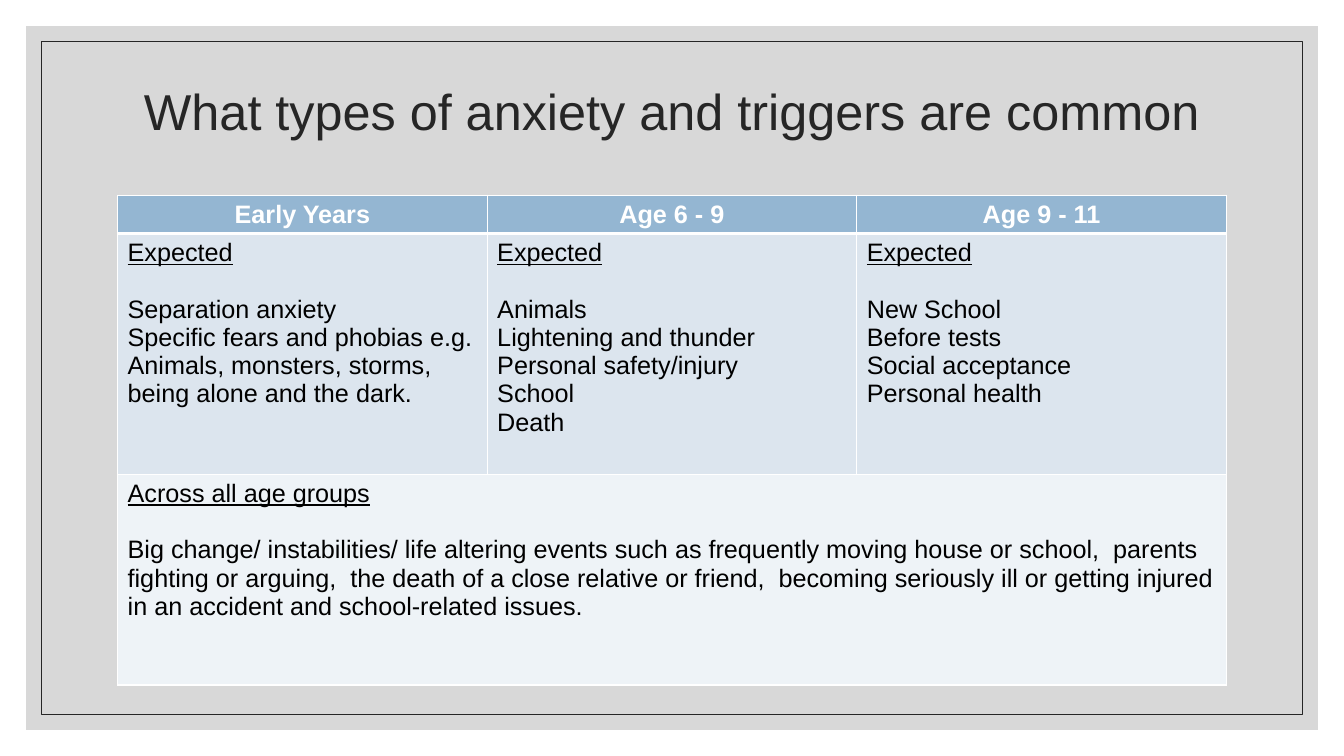
from lxml import etree
from pptx import Presentation
from pptx.dml import color
from pptx.enum import shapes, text
from pptx.oxml import ns
from pptx.util import Pt

BLACK = color.RGBColor(0x00, 0x00, 0x00)
WHITE = color.RGBColor(0xFF, 0xFF, 0xFF)
INK = color.RGBColor(0x26, 0x26, 0x26)
GREY = color.RGBColor(0xBF, 0xBF, 0xBF)
HEADER_BLUE = color.RGBColor(0x94, 0xB6, 0xD2)
BAND_BLUE = color.RGBColor(0xDC, 0xE5, 0xEE)
PALE_BLUE = color.RGBColor(0xEE, 0xF3, 0xF7)

COLUMNS = [
    ("Early Years", ["Separation anxiety",
                     "Specific fears and phobias e.g. Animals, monsters, storms, "
                     "being alone and the dark."]),
    ("Age 6 - 9", ["Animals", "Lightening and thunder", "Personal safety/injury",
                   "School", "Death"]),
    ("Age 9 - 11", ["New School", "Before tests", "Social acceptance",
                    "Personal health"]),
]
ALL_AGES = ("Big change/ instabilities/ life altering events such as frequently "
            "moving house or school,  parents fighting or arguing,  the death of a "
            "close relative or friend,  becoming seriously ill or getting injured "
            "in an accident and school-related issues.")
ROW_HEIGHTS = [27.4, 172, 150.5]
ROW_FILLS = [HEADER_BLUE, BAND_BLUE, PALE_BLUE]
BORDER_WIDTHS = [{"L": 1, "R": 1, "T": 1, "B": 3},
                 {"L": 1, "R": 1, "T": 3, "B": 1},
                 {"L": 1, "R": 1, "T": 1, "B": 1}]


def write(frame, lines, ink, **formats):
    frame.text = "\n".join(lines)
    for para in frame.paragraphs:
        for span in para.runs:
            span.font.color.rgb = ink
            for name, value in {"name": "Arial", "bold": False, **formats}.items():
                setattr(span.font, name, value)


def write_section(cell, heading, lines):
    write(cell.text_frame, [heading, *lines], BLACK, size=Pt(18))
    para = cell.text_frame.paragraphs[0]
    para.space_after = Pt(20.3)
    para.runs[0].font.underline = True


deck = Presentation()
deck.slide_width, deck.slide_height = Pt(960), Pt(540)
page = deck.slides.add_slide(deck.slide_layouts[5])

panel, outline = [
    page.shapes.add_shape(shapes.MSO_SHAPE.RECTANGLE, Pt(inset), Pt(inset),
                          Pt(960 - 2 * inset), Pt(540 - 2 * inset))
    for inset in (18.7, 29.4)
]
panel.shadow.inherit = outline.shadow.inherit = False
panel.fill.solid()
panel.fill.fore_color.rgb = GREY
panel.line.fill.background()
shade = panel.element.spPr.find(ns.qn("a:solidFill"))[0]
etree.SubElement(shade, ns.qn("a:alpha"), val="60000")
outline.fill.background()
outline.line.color.rgb = INK
outline.line.width = Pt(0.5)

title = page.shapes.title
outline.element.addnext(title.element)
title.left, title.top, title.width, title.height = Pt(84), Pt(50.4), Pt(792), Pt(62)
write(title.text_frame, ["What types of anxiety and triggers are common"], INK, size=Pt(36))
title.text_frame.auto_size = text.MSO_AUTO_SIZE.NONE
title.text_frame.vertical_anchor = text.MSO_ANCHOR.MIDDLE
title.text_frame.paragraphs[0].alignment = text.PP_ALIGN.CENTER
title.text_frame.paragraphs[0].line_spacing = 0.9

table = page.shapes.add_table(3, 3, Pt(84), Pt(139.5), Pt(792), Pt(sum(ROW_HEIGHTS))).table
table.horz_banding = False
for row, height in zip(table.rows, ROW_HEIGHTS):
    row.height = Pt(height)

for row, fill, borders in zip(table.rows, ROW_FILLS, BORDER_WIDTHS):
    for cell in row.cells:
        props = cell._tc.get_or_add_tcPr()
        for side, width in borders.items():
            line = etree.SubElement(props, ns.qn("a:ln" + side), w=str(Pt(width)))
            paint = etree.SubElement(line, ns.qn("a:solidFill"))
            etree.SubElement(paint, ns.qn("a:srgbClr"), val=str(WHITE))
        cell.fill.solid()
        cell.fill.fore_color.rgb = fill

for index, (age, triggers) in enumerate(COLUMNS):
    header = table.cell(0, index)
    write(header.text_frame, [age], WHITE, size=Pt(18), bold=True)
    header.text_frame.paragraphs[0].alignment = text.PP_ALIGN.CENTER
    write_section(table.cell(1, index), "Expected", triggers)

table.cell(2, 0).merge(table.cell(2, 2))
write_section(table.cell(2, 0), "Across all age groups", [ALL_AGES])

deck.save("out.pptx")
